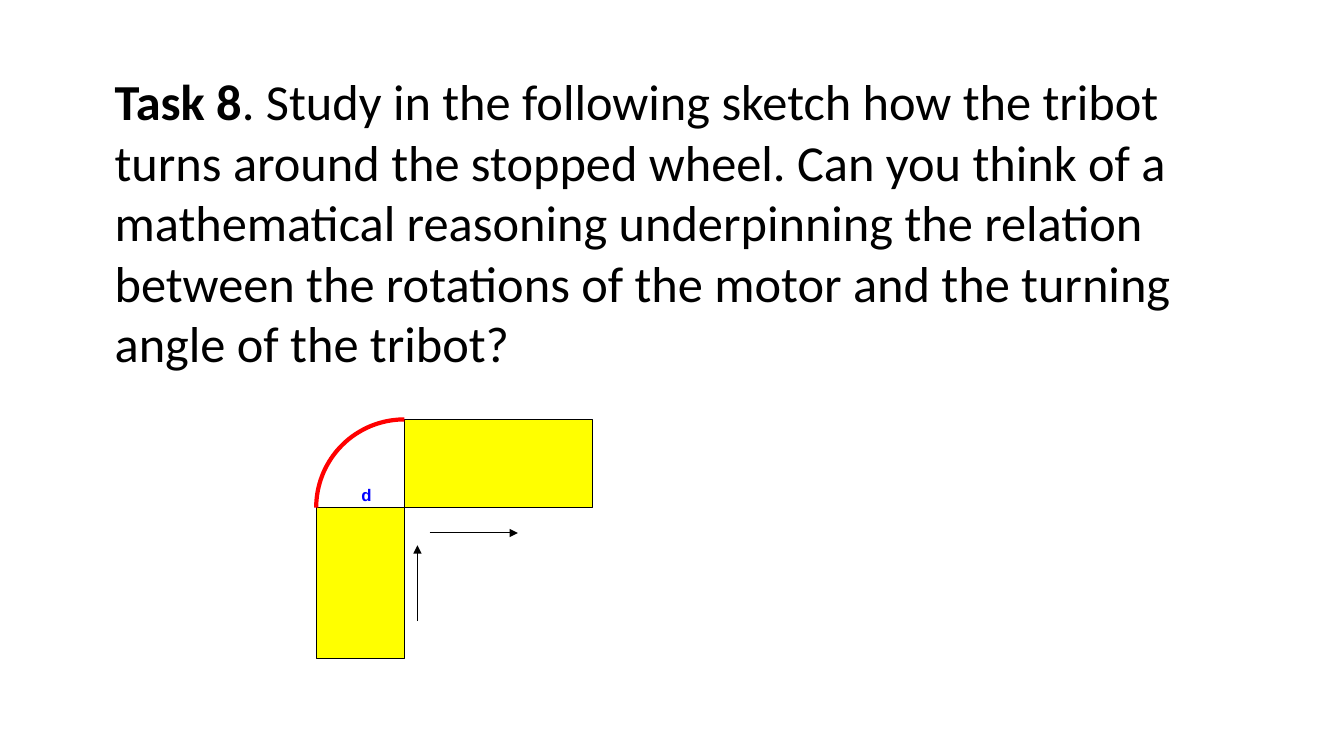
"""Build the Task 8 slide with a sketch of the turning tribot."""
from math import cos, pi, sin

from lxml import etree
from pptx import Presentation
from pptx.dml.color import RGBColor
from pptx.enum.shapes import MSO_CONNECTOR, MSO_SHAPE
from pptx.oxml.ns import qn
from pptx.util import Cm, Pt

LINE = MSO_CONNECTOR.STRAIGHT
RECT = MSO_SHAPE.RECTANGLE
BLACK = RGBColor(0, 0, 0)
YELLOW = RGBColor(255, 255, 0)
RED = RGBColor(255, 0, 0)
BLUE = RGBColor(0, 0, 255)

TASK = "Task 8"
QUERY = (
    ". Study in the following sketch how the tribot turns around the "
    "stopped wheel. Can you think of a mathematical reasoning underpinning "
    "the relation between the rotations of the motor and the turning angle "
    "of the tribot?"
)


def add_run(para, text, font, size, color, bold):
    run = para.add_run()
    run.text = text
    run.font.name = font
    run.font.size = Pt(size)
    run.font.color.rgb = color
    run.font.bold = bold


deck = Presentation()
deck.slide_width = Cm(33.87)
deck.slide_height = Cm(19.05)
slide = deck.slides.add_slide(deck.slide_layouts[6])
shapes = slide.shapes

side = 2.22
wheel_x, wheel_y = 10.19, 12.79
left, top = wheel_x - side, wheel_y - side

robots = [
    (wheel_x, top, 4.75, side),
    (left, wheel_y, side, 3.81),
]
for box in robots:
    robot = shapes.add_shape(RECT, *map(Cm, box))
    robot.shadow.inherit = False
    robot.fill.solid()
    robot.fill.fore_color.rgb = YELLOW
    robot.line.color.rgb = BLACK
    robot.line.width = Pt(0.75)

arrows = [
    (10.52, 15.65, 10.52, 13.74),
    (10.83, 13.43, 13.05, 13.43),
]
for ends in arrows:
    arrow = shapes.add_connector(LINE, *map(Cm, ends))
    arrow.line.color.rgb = BLACK
    arrow.line.width = Pt(0.75)
    props = arrow.element.spPr
    etree.SubElement(props.find(qn("a:ln")), qn("a:tailEnd"), type="triangle")
    etree.SubElement(props, qn("a:effectLst"))

steps = 40
points = []
for step in range(steps + 1):
    angle = pi / 2 * step / steps
    x = wheel_x - side * cos(angle)
    y = wheel_y - side * sin(angle)
    points.append((Cm(x), Cm(y)))
pen = shapes.build_freeform(*points[0])
pen.add_line_segments(points[1:], close=False)
arc = pen.convert_to_shape()
arc.shadow.inherit = False
arc.fill.background()
arc.line.color.rgb = RED
arc.line.width = Pt(3)

label = shapes.add_textbox(Cm(8.86), Cm(12.09), Cm(0.58), Cm(0.89))
add_run(label.text_frame.paragraphs[0], "d", "Arial", 12, BLUE, True)

prompt = shapes.add_textbox(Cm(2.64), Cm(1.65), Cm(29.34), Cm(7.95))
prompt.text_frame.word_wrap = True
para = prompt.text_frame.paragraphs[0]
add_run(para, TASK, "Calibri", 36, BLACK, True)
add_run(para, QUERY, "Calibri", 36, BLACK, False)

deck.save("out.pptx")
